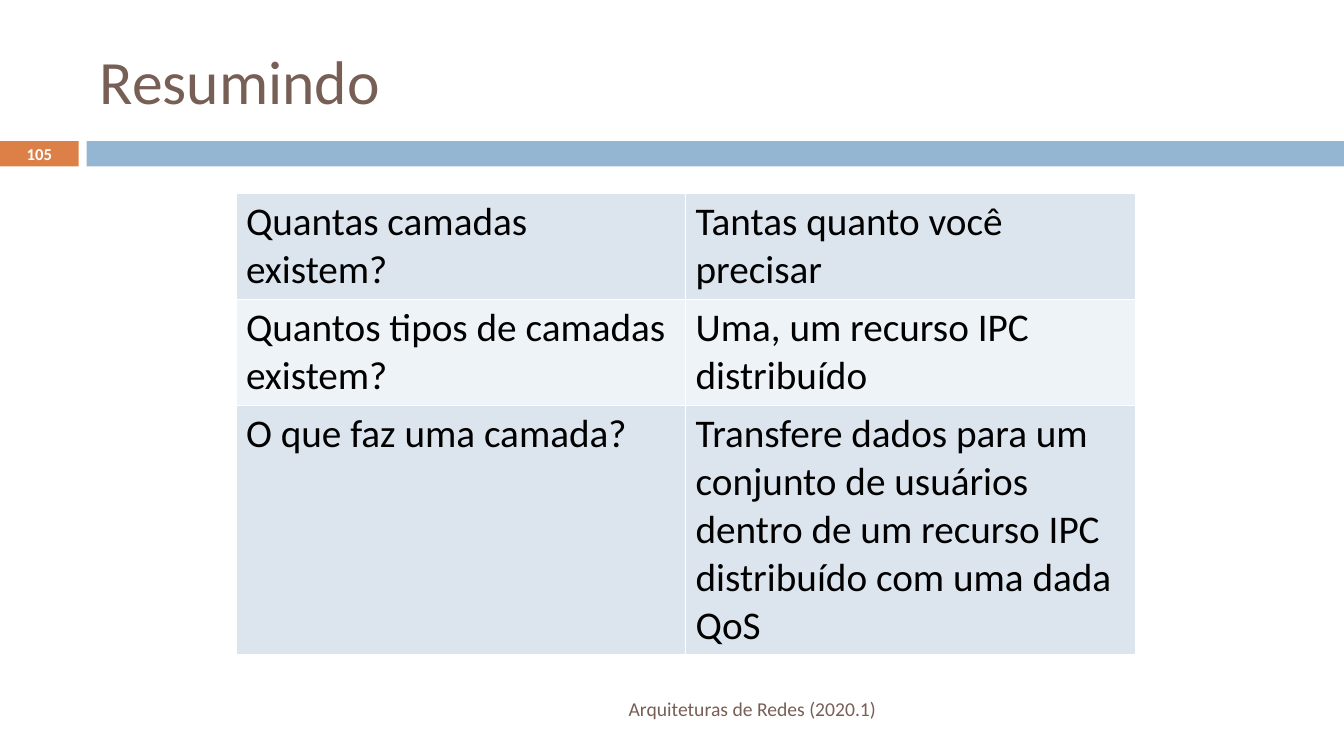
from lxml import etree
from pptx import Presentation
from pptx.dml.color import RGBColor
from pptx.enum.shapes import MSO_SHAPE
from pptx.enum.text import MSO_ANCHOR, PP_ALIGN
from pptx.oxml.ns import qn
from pptx.util import Inches, Pt

WHITE = RGBColor(0xFF, 0xFF, 0xFF)
BLACK = RGBColor(0, 0, 0)
BROWN = RGBColor(0x77, 0x5F, 0x55)
ORANGE = RGBColor(0xDD, 0x80, 0x47)
BLUE = RGBColor(0x94, 0xB6, 0xD2)
BAND_DARK = RGBColor(0xDC, 0xE5, 0xEE)
BAND_LIGHT = RGBColor(0xEE, 0xF3, 0xF7)


def write(frame, text, size, color, align=PP_ALIGN.LEFT, bold=False):
    frame.text = text
    frame.word_wrap = True
    for paragraph in frame.paragraphs:
        paragraph.alignment = align
        for run in paragraph.runs:
            run.font.name = "Calibri"
            run.font.size = Pt(size)
            run.font.bold = bold
            run.font.color.rgb = color


def add_borders(cell):
    """Give the cell white 1 pt borders, placed ahead of its fill as the schema asks."""
    properties = cell._tc.get_or_add_tcPr()
    for position, side in enumerate(("lnL", "lnR", "lnT", "lnB")):
        border = etree.Element(qn(f"a:{side}"), w=str(Pt(1)))
        fill = etree.SubElement(border, qn("a:solidFill"))
        etree.SubElement(fill, qn("a:srgbClr"), val=str(WHITE))
        properties.insert(position, border)


prs = Presentation()
prs.slide_width, prs.slide_height = Inches(13.33), Inches(7.5)
slide = prs.slides.add_slide(prs.slide_layouts[5])

# Header bars
for left, width, color in ((0, 0.78, ORANGE), (0.86, 12.47, BLUE)):
    bar = slide.shapes.add_shape(
        MSO_SHAPE.RECTANGLE, Inches(left), Inches(1.4), Inches(width), Inches(0.25))
    bar.shadow.inherit = False
    bar.fill.solid()
    bar.fill.fore_color.rgb = color
    bar.line.fill.background()

# Title
title = slide.shapes.title
title.left, title.top = Inches(0.89), Inches(0.25)
title.width, title.height = Inches(11.89), Inches(1.08)
title.text_frame.vertical_anchor = MSO_ANCHOR.MIDDLE
write(title.text_frame, "Resumindo", 44, BROWN)

# Footer and slide number
footer = slide.shapes.add_textbox(Inches(0.89), Inches(6.83), Inches(7.9), Inches(0.4))
footer.text_frame.vertical_anchor = MSO_ANCHOR.MIDDLE
write(footer.text_frame, "Arquiteturas de Redes (2020.1)", 14, BROWN, PP_ALIGN.RIGHT)

number = slide.shapes.add_textbox(0, Inches(1.39), Inches(0.78), Inches(0.27))
number.text_frame.vertical_anchor = MSO_ANCHOR.MIDDLE
write(number.text_frame, "105", 11.9, WHITE, PP_ALIGN.CENTER, bold=True)

# Questions and answers
summary = [
    ("Quantas camadas\nexistem?", "Tantas quanto você precisar"),
    ("Quantos tipos de camadas existem?", "Uma, um recurso IPC distribuído"),
    ("O que faz uma camada?",
     "Transfere dados para um conjunto de usuários dentro de um recurso IPC "
     "distribuído com uma dada QoS"),
]
row_heights = (1.05, 1.05, 2.47)
table = slide.shapes.add_table(
    len(summary), 2, Inches(2.34), Inches(1.92), Inches(8.92), Inches(sum(row_heights))).table
table.first_row = False
for index, (texts, height) in enumerate(zip(summary, row_heights)):
    table.rows[index].height = Inches(height)
    for column, text in enumerate(texts):
        cell = table.cell(index, column)
        write(cell.text_frame, text, 28, BLACK)
        cell.fill.solid()
        cell.fill.fore_color.rgb = BAND_LIGHT if index % 2 else BAND_DARK
        add_borders(cell)

prs.save("out.pptx")
